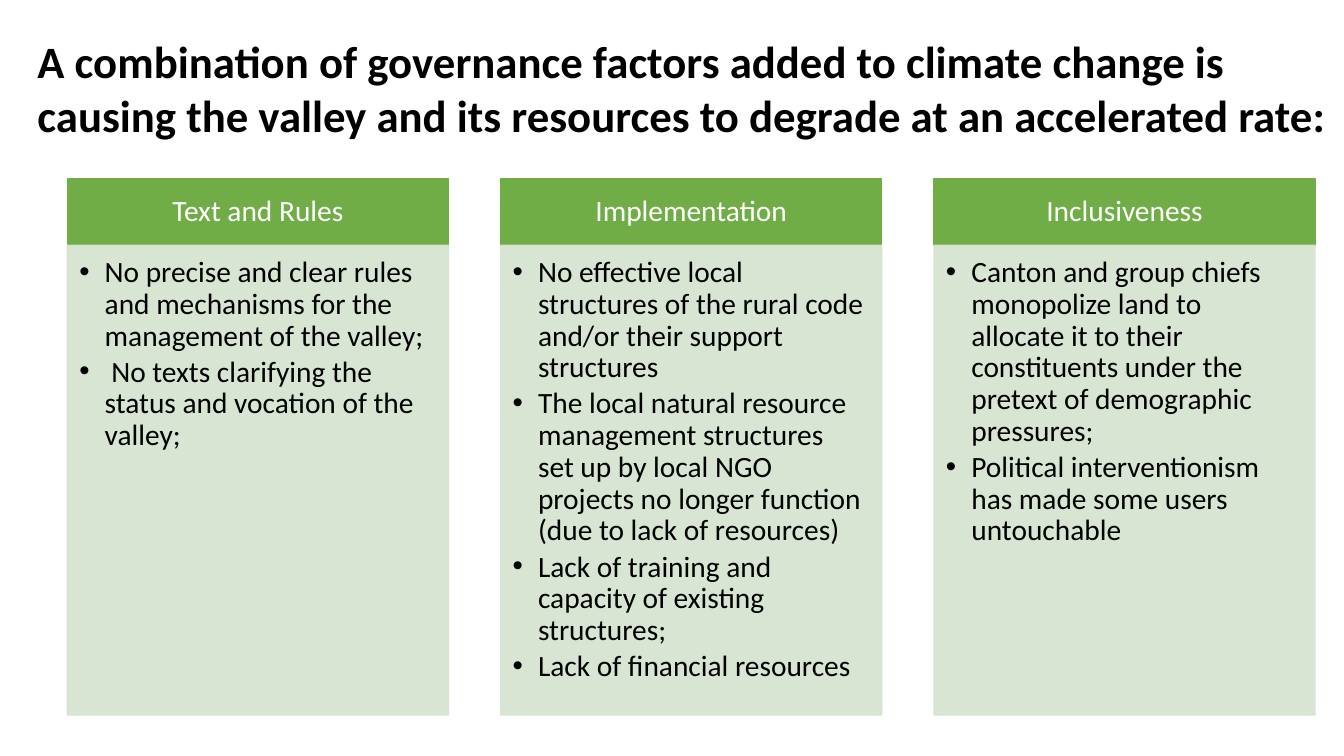
from lxml.etree import SubElement
from pptx import Presentation
from pptx.dml.color import RGBColor
from pptx.enum.shapes import MSO_SHAPE
from pptx.enum.text import MSO_ANCHOR, MSO_AUTO_SIZE, PP_ALIGN
from pptx.oxml.ns import qn
from pptx.util import Cm, Pt

FONT = "Calibri"
BLACK, WHITE, GREEN, PALE_GREEN = "000000", "FFFFFF", "70AD47", "D5E3CF"

TITLE = ("A combination of governance factors added to climate change is "
         "causing the valley and its resources to degrade at an accelerated rate:")
COLUMNS = [
    ("Text and Rules", [
        "No precise and clear rules and mechanisms for the management of the valley;",
        " No texts clarifying the status and vocation of the valley;",
    ]),
    ("Implementation", [
        "No effective local structures of the rural code and/or their support structures",
        "The local natural resource management structures set up by local NGO "
        "projects no longer function (due to lack of resources)",
        "Lack of training and capacity of existing structures;",
        "Lack of financial resources",
    ]),
    ("Inclusiveness", [
        "Canton and group chiefs monopolize land to allocate it to their "
        "constituents under the pretext of demographic pressures;",
        "Political interventionism has made some users untouchable",
    ]),
]

# Column grid, in centimetres
FIRST_LEFT, COLUMN_STEP, COLUMN_WIDTH = 1.7, 10.92, 9.6
HEADING_TOP, HEADING_HEIGHT, LIST_HEIGHT = 4.5, 1.68, 11.84


def color(hex_code):
    return RGBColor.from_string(hex_code)


def set_font(paragraph, size, hex_code, bold=False):
    font = paragraph.font
    font.name, font.size, font.bold = FONT, Pt(size), bold
    font.color.rgb = color(hex_code)


def set_opacity(shape, percent):
    for solid_fill in shape._element.spPr.iter(qn("a:solidFill")):
        SubElement(solid_fill[0], qn("a:alpha"), val=str(percent * 1000))


def set_bullet(paragraph, indent):
    properties = paragraph._p.get_or_add_pPr()
    properties.set("marL", str(indent))
    properties.set("indent", str(-indent))
    SubElement(properties, qn("a:buFont"), typeface="Arial")
    SubElement(properties, qn("a:buChar"), char="•")


def add_panel(page, left, top, height, hex_code, anchor, margins):
    panel = page.shapes.add_shape(MSO_SHAPE.RECTANGLE, Cm(left), Cm(top),
                                  Cm(COLUMN_WIDTH), Cm(height))
    panel.shadow.inherit = False
    panel.fill.solid()
    panel.fill.fore_color.rgb = color(hex_code)
    panel.line.color.rgb = color(hex_code)
    panel.line.width = Pt(1)
    frame = panel.text_frame
    frame.word_wrap = True
    frame.vertical_anchor = anchor
    (frame.margin_left, frame.margin_top,
     frame.margin_right, frame.margin_bottom) = map(Cm, margins)
    return panel


def add_title(page):
    title = page.shapes.title
    title.left, title.top, title.width, title.height = map(Cm, (0.69, 0.33, 33.2, 3.76))
    frame = title.text_frame
    frame.text = TITLE
    frame.word_wrap = True
    frame.auto_size = MSO_AUTO_SIZE.NONE
    frame.vertical_anchor = MSO_ANCHOR.MIDDLE
    paragraph = frame.paragraphs[0]
    paragraph.alignment = PP_ALIGN.LEFT
    set_font(paragraph, 32, BLACK, bold=True)


def add_heading(page, left, text):
    panel = add_panel(page, left, HEADING_TOP, HEADING_HEIGHT, GREEN,
                      MSO_ANCHOR.MIDDLE, (0.41, 0.23, 0.41, 0.23))
    panel.text_frame.text = text
    paragraph = panel.text_frame.paragraphs[0]
    paragraph.alignment = PP_ALIGN.CENTER
    paragraph.line_spacing = 0.9
    set_font(paragraph, 21, WHITE)


def add_list(page, left, items):
    panel = add_panel(page, left, HEADING_TOP + HEADING_HEIGHT, LIST_HEIGHT, PALE_GREEN,
                      MSO_ANCHOR.TOP, (0.3, 0.3, 0.41, 0.46))
    set_opacity(panel, 90)
    panel.text_frame.text = "\n".join(items)
    for paragraph in panel.text_frame.paragraphs:
        paragraph.alignment = PP_ALIGN.LEFT
        paragraph.line_spacing = 0.9
        paragraph.space_after = Pt(3.15)
        set_font(paragraph, 21, BLACK)
        set_bullet(paragraph, Cm(0.64))


def main():
    deck = Presentation()
    deck.slide_width, deck.slide_height = Cm(33.87), Cm(19.05)
    page = deck.slides.add_slide(deck.slide_layouts.get_by_name("Title Only"))
    add_title(page)

    # One heading and one list per column
    for index, (heading, items) in enumerate(COLUMNS):
        left = FIRST_LEFT + index * COLUMN_STEP
        add_heading(page, left, heading)
        add_list(page, left, items)

    deck.save("out.pptx")


if __name__ == "__main__":
    main()
